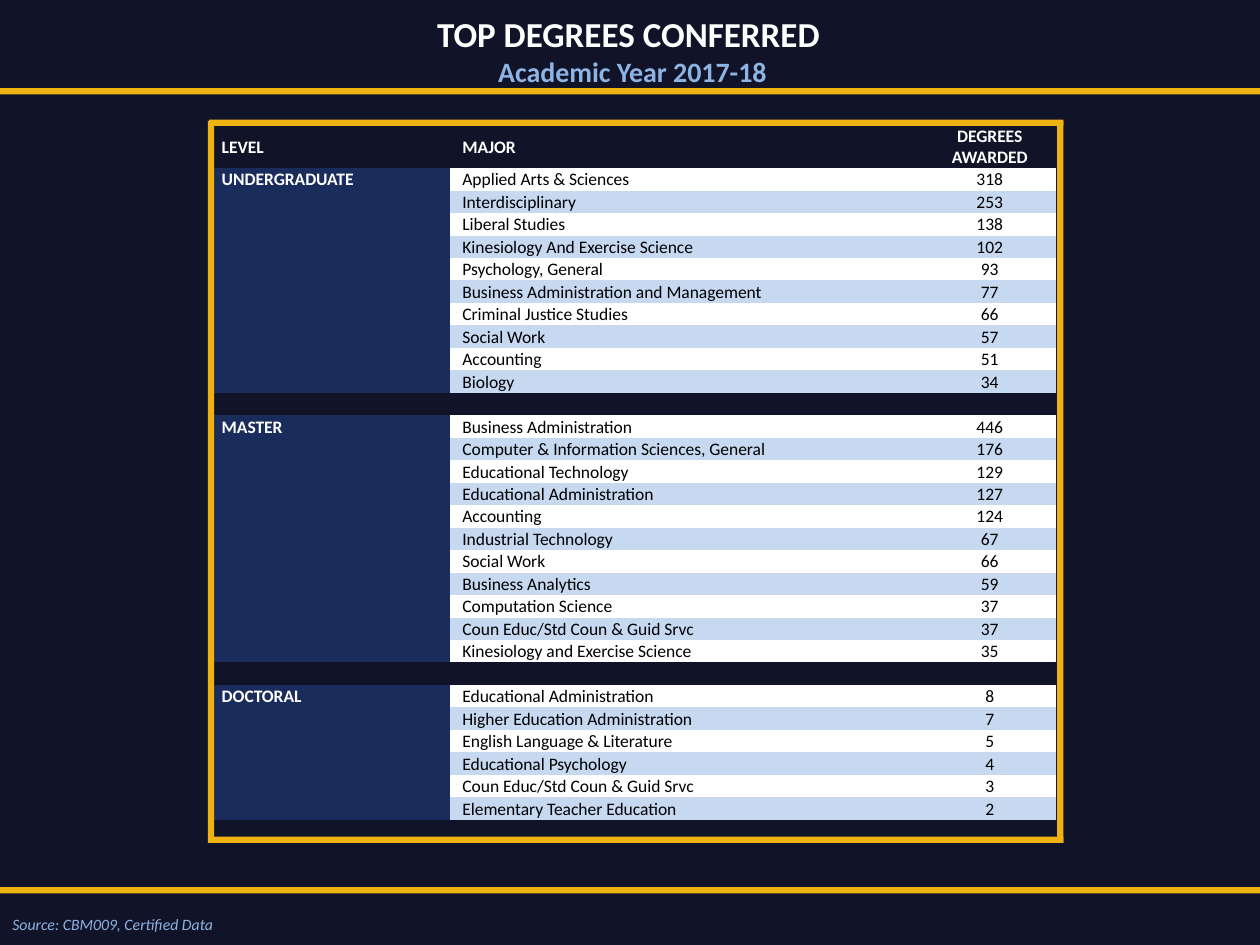
from lxml.etree import SubElement
from pptx import Presentation
from pptx.dml.color import RGBColor
from pptx.enum.shapes import MSO_SHAPE
from pptx.enum.text import MSO_ANCHOR, PP_ALIGN
from pptx.oxml.ns import qn
from pptx.util import Inches, Pt

COLORS = {
    "navy": "111428",
    "blue": "1A2C5C",
    "pale": "C6D9F1",
    "sky": "8EB4E3",
    "gold": "EEB211",
    "white": "FFFFFF",
    "black": "000000",
}
FONT = "Calibri"
PLAIN_STYLE = "{2D5ABB26-0587-4C30-8999-92F81FD0307C}"
BAR = 0.05
HEADINGS = ["LEVEL", "MAJOR", "DEGREES AWARDED"]
DEGREES = {
    "UNDERGRADUATE": [
        ("Applied Arts & Sciences", 318),
        ("Interdisciplinary", 253),
        ("Liberal Studies", 138),
        ("Kinesiology And Exercise Science", 102),
        ("Psychology, General", 93),
        ("Business Administration and Management", 77),
        ("Criminal Justice Studies", 66),
        ("Social Work", 57),
        ("Accounting", 51),
        ("Biology", 34),
    ],
    "MASTER": [
        ("Business Administration", 446),
        ("Computer & Information Sciences, General", 176),
        ("Educational Technology", 129),
        ("Educational Administration", 127),
        ("Accounting", 124),
        ("Industrial Technology", 67),
        ("Social Work", 66),
        ("Business Analytics", 59),
        ("Computation Science", 37),
        ("Coun Educ/Std Coun & Guid Srvc", 37),
        ("Kinesiology and Exercise Science", 35),
    ],
    "DOCTORAL": [
        ("Educational Administration", 8),
        ("Higher Education Administration", 7),
        ("English Language & Literature", 5),
        ("Educational Psychology", 4),
        ("Coun Educ/Std Coun & Guid Srvc", 3),
        ("Elementary Teacher Education", 2),
    ],
}


def color(name):
    return RGBColor.from_string(COLORS[name])


def degree_rows():
    rows = [(HEADINGS, ["navy"] * 3)]
    for level, majors in DEGREES.items():
        for index, (major, awarded) in enumerate(majors):
            band = "pale" if index % 2 else "white"
            label = "" if index else level
            rows.append(([label, major, str(awarded)], ["blue", band, band]))
        rows.append(([""] * 3, ["navy"] * 3))
    return rows


class SlideBuilder:
    def __init__(self, slide):
        self.slide = slide
        slide.background.fill.solid()
        slide.background.fill.fore_color.rgb = color("navy")

    def style_line(self, paragraph, text, size, tint, bold=False, italic=False):
        paragraph.text = text
        for run in paragraph.runs:
            run.font.name = FONT
            run.font.size = Pt(size)
            run.font.bold = bold
            run.font.italic = italic
            run.font.color.rgb = color(tint)

    def text(self, left, top, width, height, lines, alignment=PP_ALIGN.LEFT):
        box = self.slide.shapes.add_textbox(
            Inches(left), Inches(top), Inches(width), Inches(height))
        frame = box.text_frame
        frame.word_wrap = True
        for index, line in enumerate(lines):
            paragraph = frame.add_paragraph() if index else frame.paragraphs[0]
            paragraph.alignment = alignment
            self.style_line(paragraph, **line)

    def bar(self, left, top, width, height):
        shape = self.slide.shapes.add_shape(
            MSO_SHAPE.RECTANGLE, Inches(left), Inches(top), Inches(width), Inches(height))
        shape.shadow.inherit = False
        shape.fill.solid()
        shape.fill.fore_color.rgb = color("gold")
        shape.line.fill.background()

    def cell(self, cell, text, fill, centered):
        cell.fill.solid()
        cell.fill.fore_color.rgb = color(fill)
        cell.vertical_anchor = MSO_ANCHOR.MIDDLE
        cell.margin_left = Inches(0.01 if centered else 0.1)
        cell.margin_right = Inches(0.01 if centered else 0)
        cell.margin_top = Inches(0.01)
        cell.margin_bottom = Inches(0)
        paragraph = cell.text_frame.paragraphs[0]
        if not text:
            SubElement(paragraph._p, qn("a:endParaRPr"), sz="1000")
            return
        paragraph.alignment = PP_ALIGN.CENTER if centered else PP_ALIGN.LEFT
        dark = fill in ("navy", "blue")
        self.style_line(paragraph, text, 10, "white" if dark else "black", bold=dark)

    def table(self, left, top, widths, header_height, body_height, rows):
        shape = self.slide.shapes.add_table(
            len(rows), len(widths), Inches(left), Inches(top),
            Inches(sum(widths)), Inches(header_height + body_height))
        table = shape.table
        table.first_row = False
        table.horz_banding = False
        table._tbl.tblPr.find(qn("a:tableStyleId")).text = PLAIN_STYLE
        for column, width in zip(table.columns, widths):
            column.width = Inches(width)
        for index, (texts, fills) in enumerate(rows):
            height = body_height / (len(rows) - 1) if index else header_height
            table.rows[index].height = Inches(height)
            for position, (text, fill) in enumerate(zip(texts, fills)):
                self.cell(table.cell(index, position), text, fill, position == 2)


def main():
    presentation = Presentation()
    presentation.slide_width = Inches(10)
    presentation.slide_height = Inches(7.5)
    builder = SlideBuilder(presentation.slides.add_slide(presentation.slide_layouts[6]))

    builder.text(1.74, 0.05, 6.56, 1.28, [
        dict(text="TOP DEGREES CONFERRED ", size=20, tint="white", bold=True),
        dict(text="Academic Year 2017-18", size=16, tint="sky", bold=True),
    ], PP_ALIGN.CENTER)
    builder.table(1.66, 0.99, [1.91, 3.76, 1.05], 0.34, 5.36, degree_rows())
    builder.text(0, 7.21, 1.86, 0.25, [
        dict(text="Source: CBM009, Certified Data", size=9, tint="sky", italic=True),
    ])
    for top in (0.7, 7.04):
        builder.bar(0, top, 10, BAR)
    for top in (0.95, 6.64):
        builder.bar(1.66, top, 6.78, BAR)
    for left in (1.65, 8.39):
        builder.bar(left, 0.96, BAR, 5.73)

    presentation.save("out.pptx")


if __name__ == "__main__":
    main()
